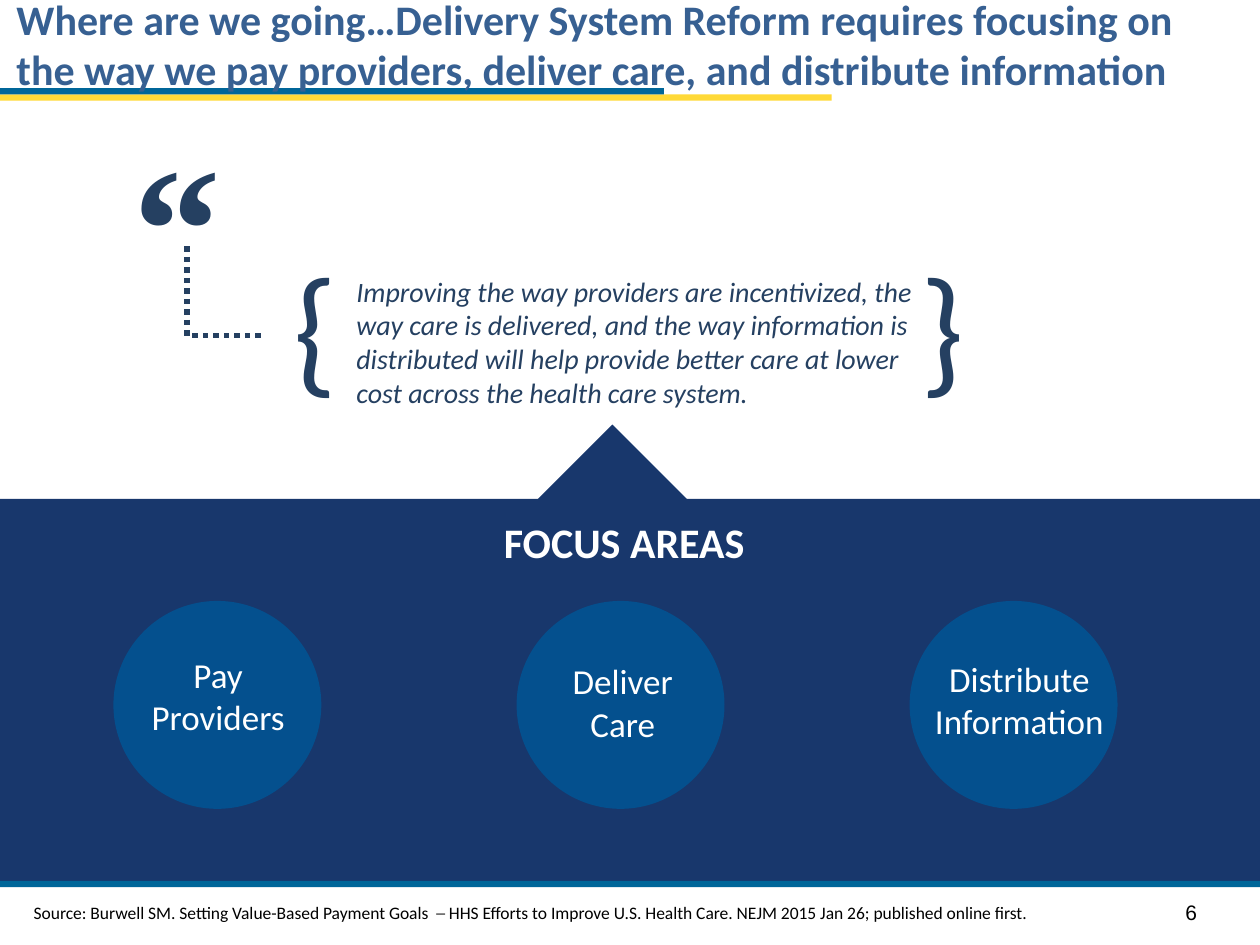
from dataclasses import dataclass

from lxml.etree import SubElement
from pptx import Presentation
from pptx.dml.color import RGBColor
from pptx.enum.dml import MSO_LINE
from pptx.enum.shapes import MSO_CONNECTOR, MSO_SHAPE
from pptx.enum.text import MSO_ANCHOR, MSO_AUTO_SIZE, PP_ALIGN
from pptx.oxml.ns import qn
from pptx.util import Pt


@dataclass(frozen=True)
class Theme:
    heading: str = "376092"
    quote: str = "254061"
    band: str = "18376C"
    circle: str = "04508E"
    teal: str = "006699"
    yellow: str = "FFD937"
    white: str = "FFFFFF"
    black: str = "000000"
    heading_size: int = 24
    label_size: int = 20
    quote_size: int = 16
    number_size: int = 12
    source_size: int = 10
    brace_size: int = 80
    mark_size: int = 100


THEME = Theme()


def points(box):
    return [Pt(value) for value in box]


def set_all(target, values):
    for name, value in values.items():
        setattr(target, name, value)


def write(frame, lines, size, color, align=PP_ALIGN.LEFT, margins=None, **font):
    set_all(frame, {"word_wrap": True, "auto_size": MSO_AUTO_SIZE.NONE, **(margins or {})})
    frame.text = "\n".join(lines)
    for paragraph in frame.paragraphs:
        paragraph.alignment = align
        set_all(paragraph.font, {"name": "Calibri", "size": Pt(size), **font})
        paragraph.font.color.rgb = RGBColor.from_string(color)


def add_text(slide, box, lines, size, color, **options):
    words = slide.shapes.add_textbox(*points(box))
    write(words.text_frame, lines, size, color, **options)
    return words


def add_block(slide, preset, box, color):
    block = slide.shapes.add_shape(preset, *points(box))
    block.shadow.inherit = False
    block.fill.solid()
    block.fill.fore_color.rgb = RGBColor.from_string(color)
    block.line.fill.background()


def build_heading(slide, box):
    left, top, width, height = box
    rules = [(57.5, 475.2, THEME.yellow), (54, 379.4, THEME.teal)]
    for offset, length, color in rules:
        add_block(slide, MSO_SHAPE.RECTANGLE, (0, top + offset + 0.7, length, 3.6), color)
    title = slide.shapes.title
    set_all(title, dict(zip(("left", "top", "width", "height"), points(box))))
    flush = {f"margin_{side}": 0 for side in ("left", "top", "right", "bottom")}
    write(
        title.text_frame,
        ["Where are we going…Delivery System Reform requires focusing on "
         "the way we pay providers, deliver care, and distribute information"],
        THEME.heading_size, THEME.heading, bold=True,
        margins={**flush, "vertical_anchor": MSO_ANCHOR.MIDDLE},
    )
    slide.shapes._spTree.append(title._element)


def build_quote(slide, box):
    left, top, width, height = box
    add_text(
        slide, (left + 127.5, top + 98.7, 347.8, 69.1),
        ["Improving the way providers are incentivized, the way care is delivered, "
         "and the way information is distributed will help provide better care at "
         "lower cost across the health care system."],
        THEME.quote_size, THEME.quote, italic=True,
        margins={"vertical_anchor": MSO_ANCHOR.MIDDLE},
    )
    for brace, offset in (("{", 91.5), ("}", 450)):
        add_text(slide, (left + offset, top + 71.6, 62.6, 104.4), [brace],
                 THEME.brace_size, THEME.quote)
    add_text(slide, (left, top, 68.4, 128.2), ["“"], THEME.mark_size, THEME.quote,
             name="Times New Roman", bold=True)

    x, y = left + 33.9, top + 82.8
    elbow = slide.shapes.add_connector(
        MSO_CONNECTOR.ELBOW, *points((x, y, x + 51.1, y + 43.2)))
    set_all(elbow.line, {"width": Pt(3), "dash_style": MSO_LINE.ROUND_DOT})
    elbow.line.color.rgb = RGBColor.from_string(THEME.quote)
    properties = elbow._element.spPr
    SubElement(properties, qn("a:effectLst"))
    properties.find(qn("a:prstGeom")).set("prst", "bentConnector2")
    for name, value in {"rot": "16200000", "flipH": "1"}.items():
        properties.find(qn("a:xfrm")).set(name, value)


def build_focus_areas(slide, box):
    left, top, width, height = box
    add_block(slide, MSO_SHAPE.RECTANGLE, box, THEME.band)
    add_block(slide, MSO_SHAPE.ISOSCELES_TRIANGLE,
              (left + 303.1, top - 42.5, 93.6, 46.8), THEME.band)
    add_text(slide, (left + 280.8, top + 6.5, 154.1, 36), ["FOCUS AREAS"],
             THEME.heading_size, THEME.white, bold=True)
    diameter, label_width = 118.8, 165.6
    areas = [
        (64.8, 124.7, 84.9, ["Pay", "Providers"]),
        (295.2, 355.9, 88.5, ["Deliver", "Care"]),
        (519.8, 582.5, 87.1, ["Distribute", "Information"]),
    ]
    for circle_left, label_center, label_top, lines in areas:
        add_block(slide, MSO_SHAPE.OVAL,
                  (left + circle_left, top + 58.3, diameter, diameter), THEME.circle)
        add_text(slide,
                 (left + label_center - label_width / 2, top + label_top, label_width, 55.4),
                 lines, THEME.label_size, THEME.white, align=PP_ALIGN.CENTER)


def build_footer(slide, box):
    left, top, width, height = box
    add_block(slide, MSO_SHAPE.RECTANGLE, (left, top, width, 3.6), THEME.teal)
    add_text(
        slide, (left + 12.2, top + 8.6, 648, 19.4),
        ["Source: Burwell SM. Setting Value-Based Payment Goals  ─ HHS Efforts to "
         "Improve U.S. Health Care. NEJM 2015 Jan 26; published online first."],
        THEME.source_size, THEME.black,
    )
    add_text(slide, (left + 670.3, top + 7.2, 35.3, 21.6), ["6"],
             THEME.number_size, THEME.black, name="Arial")


def main():
    deck = Presentation()
    set_all(deck, {"slide_width": Pt(720), "slide_height": Pt(540)})
    slide = deck.slides.add_slide(deck.slide_layouts.get_by_name("Title Only"))
    build_focus_areas(slide, (0, 285.1, 720, 219.6))
    build_footer(slide, (0, 503.3, 720, 36.7))
    build_heading(slide, (9.4, -4.3, 692.6, 58.3))
    build_quote(slide, (69.1, 61.9, 512.6, 176))
    deck.save("out.pptx")


if __name__ == "__main__":
    main()
